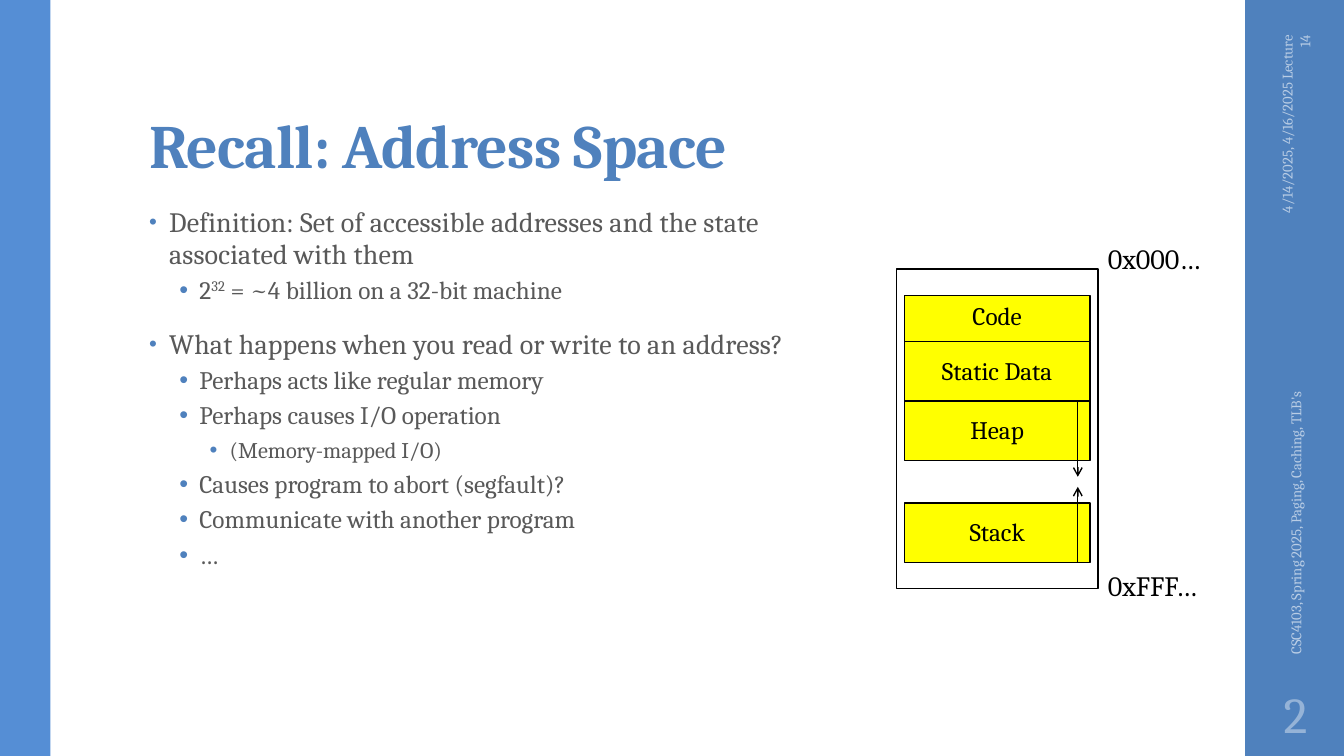
from lxml import etree
from pptx import Presentation
from pptx import util as u
from pptx.dml.color import RGBColor
from pptx.enum import shapes, text
from pptx.oxml import ns

COLOURS = {
    "accent": "4F81BD", "left_band": "558ED5", "body": "595959",
    "footer": "B9CDE5", "number": "95B3D7", "segment": "FFFF00", "ink": "000000",
}
FONT = "Cambria"
CELL = 0.1  # inches per grid column and row
WIDTH, HEIGHT = 133.3, 75  # slide size in cells
BAND_LEFT, BAND_WIDTH = 123.5, 10

# Per level: text size, spacing before and after, line spacing, tracking, bullet size
LEVELS = [
    (20, 14, 2, 0.95, 10, 80),
    (18, 3, 3, 0.9, 0, 100),
    (16, 3, 3, 0.9, 0, 100),
]
BULLETS = [
    (0, ["Definition: Set of accessible addresses and the state associated with them"]),
    (1, ["2", "^32", " = ~4 billion on a 32-bit machine"]),
    (0, ["What happens when you read or write to an address?"]),
    (1, ["Perhaps acts like regular memory"]),
    (1, ["Perhaps causes I/O operation"]),
    (2, ["(Memory-mapped I/O)"]),
    (1, ["Causes program to abort (segfault)?"]),
    (1, ["Communicate with another program"]),
    (1, ["…"]),
]

# Memory map: label, top row, height, rows above the label
MEMORY_LEFT, MEMORY_TOP, MEMORY_WIDTH, MEMORY_HEIGHT = 88.9, 26.7, 20, 31.7
SEGMENT_LEFT, SEGMENT_WIDTH = 89.7, 18.4
SEGMENTS = [
    ("Code", 29.3, 4.6, 0.5),
    ("Static Data", 33.9, 5.9, 1.3),
    ("Heap", 39.8, 5.9, 1.3),
    ("Stack", 49.9, 5.9, 1.3),
]
GROWTH_COLUMN, GROWTH_LENGTH = 106.9, 7.5


def cells(*counts):
    return [u.Inches(count * CELL) for count in counts]


def colour(name):
    return RGBColor.from_string(COLOURS[name])


def add_span(para, words, size=18, ink="ink", bold=False, tracking=None, raised=False):
    span = para.add_run()
    span.text = words
    span.font.name, span.font.size, span.font.bold = FONT, u.Pt(size), bold
    span.font.color.rgb = colour(ink)
    properties = span.font._element
    if tracking is not None:
        properties.set("spc", str(tracking))
    if raised:
        properties.set("baseline", "30000")


def set_frame(shape, anchor="TOP", wrap=True, insets=(1, 0.5, 1, 0.5)):
    """Insets run left, top, right, bottom."""
    frame = shape.text_frame
    frame.word_wrap = wrap
    frame.vertical_anchor = text.MSO_ANCHOR[anchor]
    (frame.margin_left, frame.margin_top,
     frame.margin_right, frame.margin_bottom) = cells(*insets)
    return frame


def add_text(page, words, place, align="LEFT", rotation=0, line_spacing=None,
             anchor="TOP", wrap=True, insets=(1, 0.5, 1, 0.5), **font):
    box = page.shapes.add_textbox(*cells(*place))
    box.rotation = rotation
    para = set_frame(box, anchor, wrap, insets).paragraphs[0]
    para.alignment = text.PP_ALIGN[align]
    para.line_spacing = line_spacing
    add_span(para, words, **font)


def add_rectangle(parent, place, fill=None, outline=None):
    box = parent.shapes.add_shape(shapes.MSO_SHAPE.RECTANGLE, *cells(*place))
    box.shadow.inherit = False
    if fill:
        box.fill.solid()
        box.fill.fore_color.rgb = colour(fill)
    else:
        box.fill.background()
    if outline:
        box.line.color.rgb = colour(outline)
        box.line.width = u.Pt(1)
    else:
        box.line.fill.background()
    return box


def add_segment(group, label, top, height, label_gap):
    box = add_rectangle(group, (SEGMENT_LEFT, top, SEGMENT_WIDTH, height), "segment", "ink")
    para = set_frame(box, wrap=False, insets=(1, label_gap, 1, 0)).paragraphs[0]
    para.alignment = text.PP_ALIGN.CENTER
    add_span(para, label)


def add_growth_arrow(group, start, end):
    arrow = group.shapes.add_connector(
        shapes.MSO_CONNECTOR.STRAIGHT, *cells(GROWTH_COLUMN, start, GROWTH_COLUMN, end))
    arrow.line.color.rgb = colour("ink")
    arrow.line.width = u.Pt(1)
    etree.SubElement(arrow.line._get_or_add_ln(), ns.qn("a:tailEnd"), type="arrow")
    etree.SubElement(arrow._element.spPr, ns.qn("a:effectLst"))


def set_bullet(para, level, scale):
    properties = para._p.get_or_add_pPr()
    properties.set("marL", str(u.Inches(0.2 + 0.3 * level)))
    properties.set("indent", str(u.Inches(-0.2)))
    bullet_colour = etree.SubElement(properties, ns.qn("a:buClr"))
    etree.SubElement(bullet_colour, ns.qn("a:srgbClr"), val=COLOURS["accent"])
    etree.SubElement(properties, ns.qn("a:buSzPct"), val=str(scale * 1000))
    etree.SubElement(properties, ns.qn("a:buFont"), typeface="Arial")
    etree.SubElement(properties, ns.qn("a:buChar"), char="•")


def add_bullets(page, place):
    frame = set_frame(page.shapes.add_textbox(*cells(*place)))
    for index, (level, parts) in enumerate(BULLETS):
        para = frame.add_paragraph() if index else frame.paragraphs[0]
        size, before, after, spacing, tracking, scale = LEVELS[level]
        para.level, para.line_spacing = level, spacing
        para.space_before, para.space_after = u.Pt(before), u.Pt(after)
        set_bullet(para, level, scale)
        for part in parts:
            add_span(para, part.lstrip("^"), size=size, ink="body",
                     tracking=tracking, raised=part.startswith("^"))


def add_memory_map(page):
    add_rectangle(page, (MEMORY_LEFT, MEMORY_TOP, MEMORY_WIDTH, MEMORY_HEIGHT), outline="ink")
    right = MEMORY_LEFT + MEMORY_WIDTH
    for address, top in (("0x000…", 23.5), ("0xFFF…", 55.9)):
        add_text(page, address, (right, top, 13, 4.4), size=20, wrap=False)
    group = page.shapes.add_group_shape()
    for segment in SEGMENTS:
        add_segment(group, *segment)
    # The heap grows down from its top, the stack up from its bottom
    heap_top = SEGMENTS[2][1]
    stack_bottom = SEGMENTS[3][1] + SEGMENTS[3][2]
    add_growth_arrow(group, stack_bottom, stack_bottom - GROWTH_LENGTH)
    add_growth_arrow(group, heap_top, heap_top + GROWTH_LENGTH)


def main():
    deck = Presentation()
    deck.slide_width, deck.slide_height = cells(WIDTH, HEIGHT)
    page = deck.slides.add_slide(deck.slide_layouts[6])

    # Side bands
    add_rectangle(page, (BAND_LEFT, 0, BAND_WIDTH, HEIGHT), "accent")
    add_rectangle(page, (0, 0, 5, HEIGHT), "left_band")

    # Title and bullets
    add_text(page, "Recall: Address Space", (13.8, 3.2, 106, 15.3), anchor="BOTTOM",
             insets=(1, 0.3, 1, 0.5), line_spacing=0.9, size=44, ink="accent",
             bold=True, tracking=-50)
    add_bullets(page, (13.8, 20, 73.3, 47.6))

    # Date, course and page number on the right band
    footer = dict(rotation=270, anchor="MIDDLE", size=10.5, ink="footer")
    add_text(page, "4/14/2025, 4/16/2025 Lecture 14", (118.1, 10.9, 20.8, 4),
             align="RIGHT", **footer)
    add_text(page, "CSC4103, Spring 2025, Paging, Caching, TLB's",
             (108.9, 44.3, 39.2, 4), **footer)
    add_text(page, "2", (BAND_LEFT, 67.5, BAND_WIDTH, 6.5), align="CENTER",
             anchor="MIDDLE", insets=(0.5,) * 4, size=36, ink="number")

    add_memory_map(page)
    deck.save("out.pptx")


if __name__ == "__main__":
    main()
